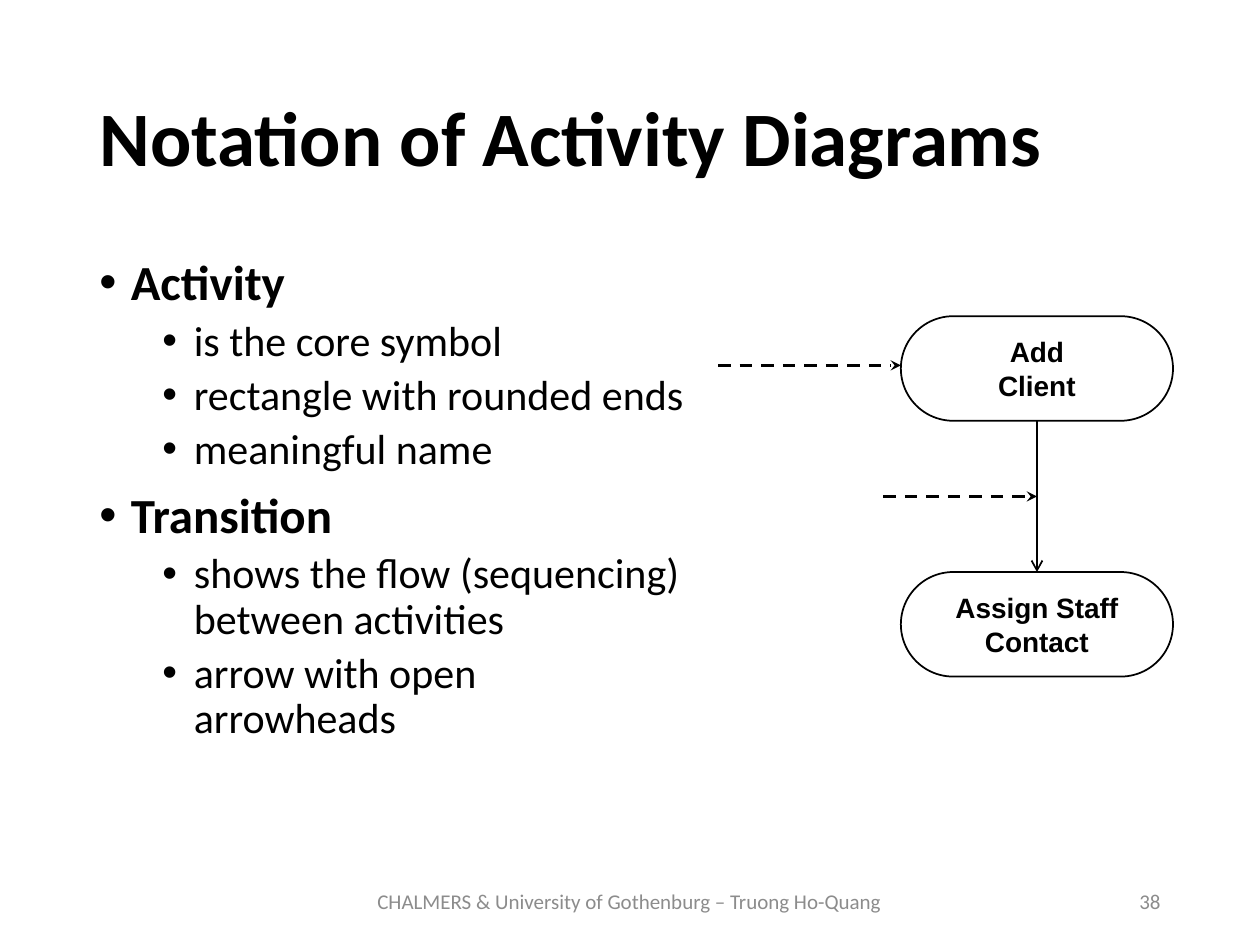
from lxml import etree
from pptx import Presentation
from pptx import util as u
from pptx.dml.color import RGBColor
from pptx.enum import dml, shapes, text
from pptx.oxml.ns import qn

BLACK, WHITE, GREY = "000000", "FFFFFF", "8C8C8C"
ALIGN = text.PP_ALIGN


def rgb(hex_color):
    return RGBColor.from_string(hex_color)


def box(*lengths):
    return [u.Inches(n) for n in lengths]


class SlideBuilder:
    body_font = "Calibri"
    shape_font = "Arial"

    def __init__(self, slide):
        self.s = slide

    def frame(self, sp, anchor, wrap=True):
        tf = sp.text_frame
        tf.auto_size = text.MSO_AUTO_SIZE.NONE
        tf.word_wrap = wrap
        tf.vertical_anchor = anchor
        return tf

    def add_text(self, p, content, size, color=BLACK, bold=False, font=body_font):
        for i, line in enumerate(content.split("\n")):
            if i:
                p.add_line_break()
            r = p.add_run()
            r.text = line
            r.font.size, r.font.bold, r.font.name = u.Pt(size), bold, font
            r.font.color.rgb = rgb(color)

    def title(self, content, *at):
        sp = self.s.shapes.title
        sp.left, sp.top, sp.width, sp.height = box(*at)
        p = self.frame(sp, text.MSO_ANCHOR.MIDDLE).paragraphs[0]
        p.alignment, p.line_spacing = ALIGN.LEFT, 0.9
        self.add_text(p, content, 44, bold=True)

    def bullets(self, items, *at):
        tf = self.frame(self.s.shapes.add_textbox(*box(*at)), text.MSO_ANCHOR.TOP)
        for i, (level, content) in enumerate(items):
            p = tf.add_paragraph() if i else tf.paragraphs[0]
            p.level, p.line_spacing = level, 0.9
            p.space_before = u.Pt((5 if level else 10) if i else 0)
            pPr = p._p.get_or_add_pPr()
            pPr.set("marL", str(u.Inches(0.25 + 0.5 * level)))
            pPr.set("indent", str(u.Inches(-0.25)))
            etree.SubElement(pPr, qn("a:buFont")).set("typeface", "Arial")
            etree.SubElement(pPr, qn("a:buChar")).set("char", "•")
            self.add_text(p, content, 24 if level else 28, bold=not level)

    def footer(self, content, align, *at):
        sp = self.s.shapes.add_textbox(*box(*at))
        p = self.frame(sp, text.MSO_ANCHOR.MIDDLE).paragraphs[0]
        p.alignment = align
        self.add_text(p, content, 12, GREY)

    def activity(self, content, *at):
        sp = self.s.shapes.add_shape(shapes.MSO_SHAPE.ROUNDED_RECTANGLE, *box(*at))
        sp.adjustments[0] = 0.5
        sp.shadow.inherit = False
        sp.fill.solid()
        sp.fill.fore_color.rgb = rgb(WHITE)
        sp.line.color.rgb, sp.line.width = rgb(BLACK), u.Pt(1)
        p = self.frame(sp, text.MSO_ANCHOR.MIDDLE, wrap=False).paragraphs[0]
        p.alignment = ALIGN.CENTER
        self.add_text(p, content, 16, bold=True, font=self.shape_font)

    def arrow(self, start, end, width=1, head="arrow", dashed=False):
        c = self.s.shapes.add_connector(
            shapes.MSO_CONNECTOR.STRAIGHT, *box(*start, *end))
        c.line.color.rgb, c.line.width = rgb(BLACK), u.Pt(width)
        if dashed:
            c.line.dash_style = dml.MSO_LINE.DASH
        spPr = c._element.spPr
        etree.SubElement(spPr.get_or_add_ln(), qn("a:tailEnd")).set("type", head)
        etree.SubElement(spPr, qn("a:effectLst"))


def main():
    prs = Presentation()
    prs.slide_width, prs.slide_height = box(10, 7.5)
    b = SlideBuilder(prs.slides.add_slide(prs.slide_layouts[5]))

    # Title and bullet list
    b.title("Notation of Activity Diagrams", 0.69, 0.4, 8.62, 1.45)
    b.bullets([
        (0, "Activity"),
        (1, "is the core symbol"),
        (1, "rectangle with rounded ends"),
        (1, "meaningful name"),
        (0, "Transition"),
        (1, "shows the flow (sequencing) \nbetween activities"),
        (1, "arrow with open\narrowheads"),
    ], 0.69, 2, 8.62, 4.76)

    # Slide number and footer
    b.footer("38", ALIGN.RIGHT, 7.06, 6.95, 2.25, 0.4)
    b.footer("CHALMERS & University of Gothenburg – Truong Ho-Quang",
             ALIGN.CENTER, 2.72, 6.95, 4.55, 0.4)

    # Activities and the transition between them
    left, width, height = 7.15, 2.16, 0.83
    first_top, second_top = 2.51, 4.54
    center = left + width / 2
    b.activity("Add\nClient", left, first_top, width, height)
    b.activity("Assign Staff\nContact", left, second_top, width, height)
    b.arrow((center, first_top + height), (center, second_top))

    # Dashed pointers from the bullets to the symbols
    for x1, x2, y in [(5.7, left, 2.9), (7.01, center, 3.94)]:
        b.arrow((x1, y), (x2, y), 1.75, "stealth", dashed=True)

    prs.save("out.pptx")


if __name__ == "__main__":
    main()
